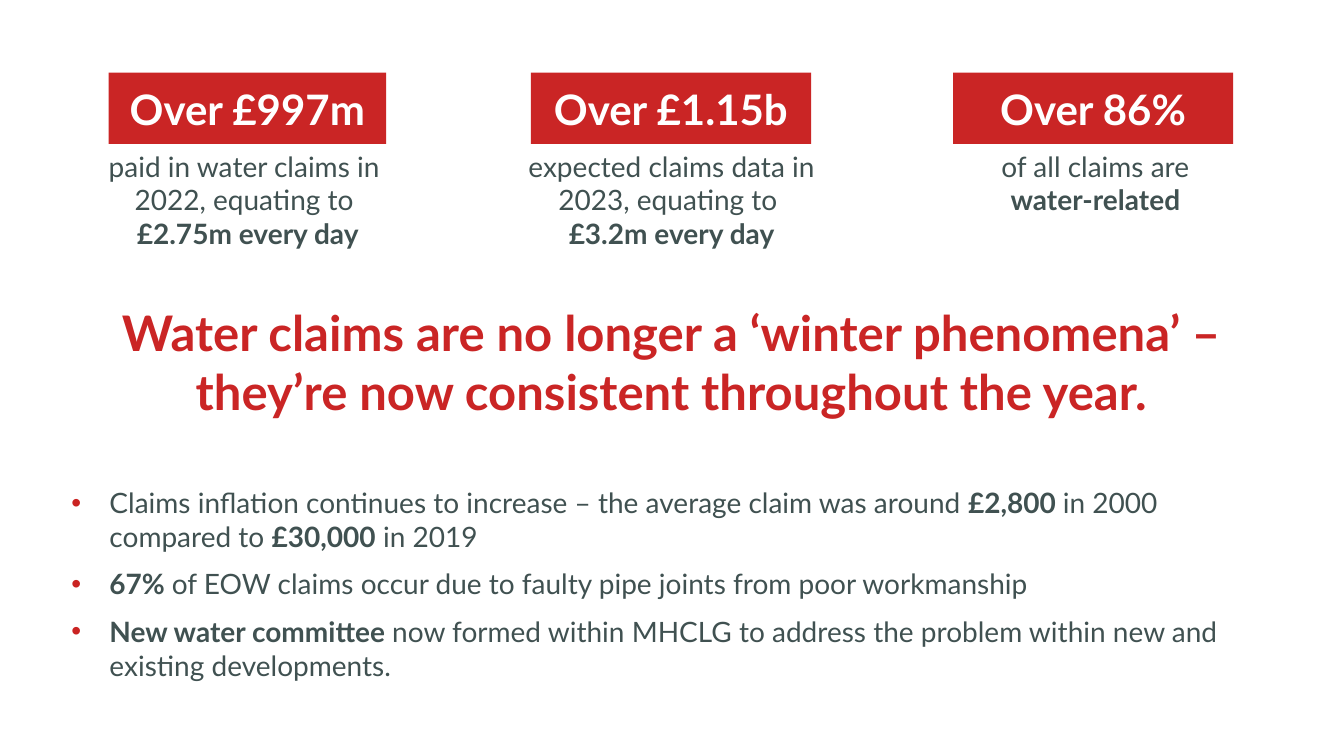
from dataclasses import dataclass

from lxml.etree import SubElement
from pptx import Presentation
from pptx.dml.color import RGBColor
from pptx.enum.shapes import MSO_SHAPE
from pptx.enum.text import MSO_ANCHOR, MSO_AUTO_SIZE, PP_ALIGN
from pptx.oxml.ns import qn
from pptx.util import Cm, Pt

RED, GREY, WHITE = "CA2525", "405151", "FFFFFF"
BASE = {"name": "Lato", "size": Pt(20)}
BANNER = {"name": "Lato", "size": Pt(30)}
TITLE = {"name": "Lato", "size": Pt(35)}
FRAME = {
    "word_wrap": True,
    "vertical_anchor": MSO_ANCHOR.TOP,
    "auto_size": MSO_AUTO_SIZE.SHAPE_TO_FIT_TEXT,
    "margin_left": 0,
    "margin_right": 0,
    "margin_top": 0,
    "margin_bottom": 0,
}


@dataclass
class Stat:
    """A headline figure with its caption; bold parts stand between asterisks."""

    figure: str
    caption: str
    width: float
    height: float


STATS = [
    Stat("*Over £997m*", "paid in water claims in \n2022, equating to \n*£2.75m every day*", 6.99, 2.57),
    Stat("*Over £1.15b*", "expected claims data in 2023, equating to \n*£3.2m every day*", 7.06, 2.57),
    Stat("*Over 86%*", "of all claims are\n*water-related*", 7.06, 1.7),
]
HEADLINE = "*Water claims are no longer a ‘winter phenomena’ –\nthey’re now consistent throughout the year.*"
POINTS = [
    "Claims inflation continues to increase – the average claim was around "
    "*£2,800 *in 2000 compared to *£30,000* in 2019",
    "*67% *of EOW claims occur due to faulty pipe joints from poor workmanship",
    "*New water committee* now formed within MHCLG to address the problem "
    "within new and existing developments.",
]


def tint(fmt, color: str) -> None:
    """Set a font or solid fill to a hex colour."""
    target = fmt.color if hasattr(fmt, "color") else fmt.fore_color
    target.rgb = RGBColor.from_string(color)


def assign(obj, values: dict) -> None:
    """Set each named value on an object."""
    for name, value in values.items():
        setattr(obj, name, value)


def write(para, text: str, look: dict, color: str, align=PP_ALIGN.CENTER) -> None:
    """Write marked text as plain and bold runs."""
    para.alignment = align
    for part, chunk in enumerate(text.split("*")):
        for row, line in enumerate(chunk.split("\n")):
            if row:
                para.add_line_break()
            if line:
                run = para.add_run()
                run.text = line
                assign(run.font, {**look, "bold": part % 2 == 1})
                tint(run.font, color)


def place(shape, left: float, top: float, width: float, height: float):
    """Position a text shape and return its formatted frame."""
    assign(shape, {"left": Cm(left), "top": Cm(top), "width": Cm(width), "height": Cm(height)})
    assign(shape.text_frame, FRAME)
    return shape.text_frame


def bullet(para) -> None:
    """Give a paragraph a red hanging bullet."""
    props = para._p.get_or_add_pPr()
    props.set("marL", str(Cm(0.96)))
    props.set("indent", str(-Cm(0.96)))
    SubElement(SubElement(props, qn("a:buClr")), qn("a:srgbClr"), val="CA2322")
    SubElement(props, qn("a:buFont"), typeface="Arial")
    SubElement(props, qn("a:buChar"), char="•")
    para.space_after = Pt(10)


def draw_stat(slide, stat: Stat, col: int) -> None:
    """Draw one figure banner above its caption."""
    note = slide.shapes.add_textbox(0, 0, 0, 0)
    frame = place(note, 1.8 + 10.68 * col, 3.76, 8.89, stat.height)
    write(frame.paragraphs[0], stat.caption, BASE, GREY)
    box = slide.shapes.add_shape(
        MSO_SHAPE.RECTANGLE, Cm(2.74 + 10.64 * col), Cm(1.83), Cm(stat.width), Cm(1.8)
    )
    box.shadow.inherit = False
    box.fill.solid()
    tint(box.fill, RED)
    box.line.fill.background()
    box.text_frame.vertical_anchor = MSO_ANCHOR.MIDDLE
    write(box.text_frame.paragraphs[0], stat.figure, BANNER, WHITE)


def main() -> None:
    """Build and save the slide."""
    deck = Presentation()
    assign(deck, {"slide_width": Cm(33.87), "slide_height": Cm(19.05)})
    slide = deck.slides.add_slide(deck.slide_layouts[5])
    for col, stat in enumerate(STATS):
        draw_stat(slide, stat, col)
    title = place(slide.shapes.title, 1.8, 7.62, 30.25, 3)
    write(title.paragraphs[0], HEADLINE, TITLE, RED)
    body = place(slide.shapes.add_textbox(0, 0, 0, 0), 1.8, 12.24, 30.28, 4.98)
    for row, point in enumerate(POINTS):
        para = body.add_paragraph() if row else body.paragraphs[0]
        bullet(para)
        write(para, point, BASE, GREY, PP_ALIGN.LEFT)
    deck.save("out.pptx")


if __name__ == "__main__":
    main()
